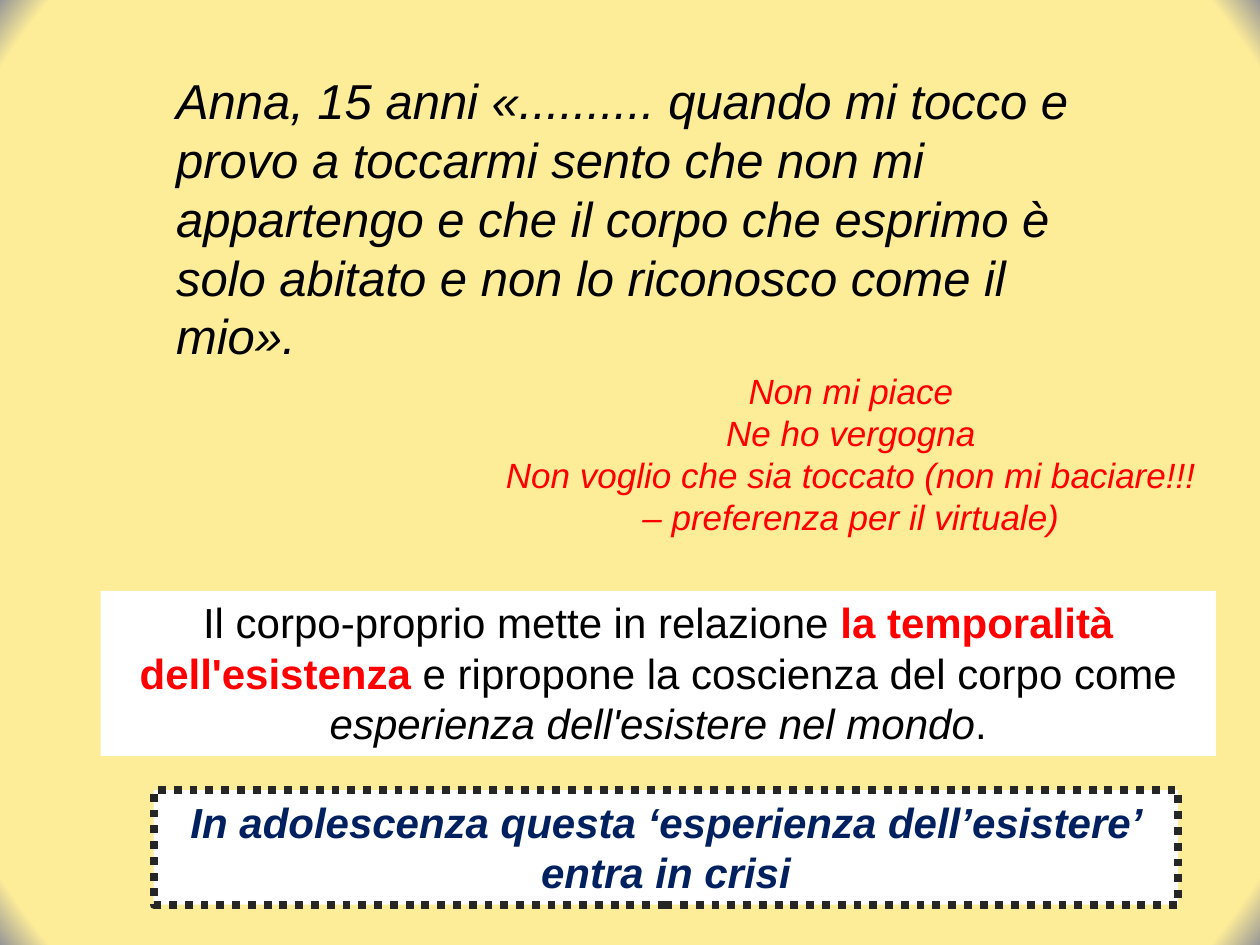
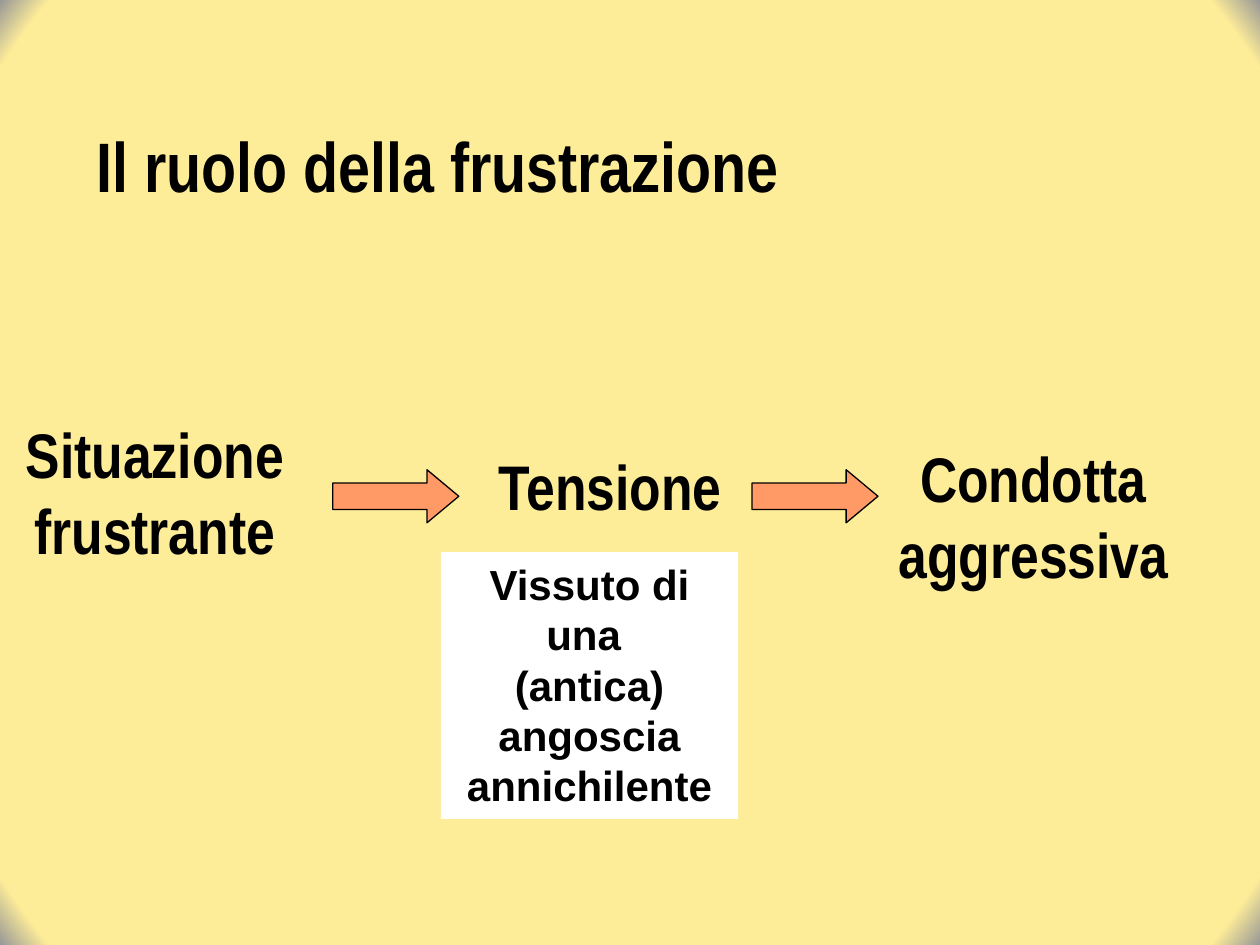
from dataclasses import dataclass

import pptx
import pptx.dml.color
import pptx.enum.dml
import pptx.enum.shapes
import pptx.enum.text
import pptx.oxml
import pptx.oxml.ns
import pptx.util
from pptx.util import Cm

SHAPE = pptx.enum.shapes.MSO_SHAPE
ALIGN = pptx.enum.text.PP_ALIGN


@dataclass(frozen=True)
class Theme:
    # Colours
    paper: str = "FDEC98"
    corner: str = "979797"
    ink: str = "000000"
    red: str = "FF0000"
    navy: str = "002060"
    white: str = "FFFFFF"
    orange: str = "FF9966"
    border: str = "262626"
    # Fonts and type sizes
    body: str = "Arial"
    narrow: str = "Arial Narrow"
    title: int = 40
    step: int = 36
    quote: int = 28
    panel: int = 24
    aside: int = 20


T = Theme()


def rgb(value):
    return pptx.dml.color.RGBColor.from_string(value)


def add_slide(prs):
    """Blank slide with the shared circular background gradient."""
    s = prs.slides.add_slide(prs.slide_layouts[6])
    fill = s.background.fill
    fill.gradient()
    stops = ((0.95, T.paper), (1, T.corner))
    for stop, (position, color) in zip(fill.gradient_stops, stops):
        stop.position = position
        stop.color.rgb = rgb(color)
    ns = pptx.oxml.ns
    lin = s.element.find(".//" + ns.qn("a:lin"))
    circle = pptx.oxml.parse_xml(
        f'<a:path {ns.nsdecls("a")} path="circle">'
        '<a:fillToRect l="50000" t="50000" r="50000" b="50000"/></a:path>')
    lin.getparent().replace(lin, circle)
    return s


def write(sp, text, size, font=T.body, color=T.ink, bold=False, italic=False,
          align=ALIGN.CENTER):
    """Fill sp with paragraphs; a paragraph is a string or a list of
    (text, overrides) runs."""
    tf = sp.text_frame
    tf.word_wrap = True
    tf.vertical_anchor = pptx.enum.text.MSO_ANCHOR.TOP
    paragraphs = [text] if isinstance(text, str) else text
    for i, content in enumerate(paragraphs):
        p = tf.paragraphs[0] if i == 0 else tf.add_paragraph()
        p.alignment = align
        runs = [(content, {})] if isinstance(content, str) else content
        for words, changes in runs:
            r = p.add_run()
            r.text = words
            r.font.name = font
            r.font.size = pptx.util.Pt(size)
            r.font.bold = changes.get("bold", bold)
            r.font.italic = changes.get("italic", italic)
            r.font.color.rgb = rgb(changes.get("color", color))


def add_text(s, box, text, size, **style):
    write(s.shapes.add_textbox(*map(Cm, box)), text, size, **style)


def add_shape(s, kind, box, fill, line=None, width=0.75, dash=None):
    sp = s.shapes.add_shape(kind, *map(Cm, box))
    sp.shadow.inherit = False
    sp.fill.solid()
    sp.fill.fore_color.rgb = rgb(fill)
    if line is None:
        sp.line.fill.background()
    else:
        sp.line.color.rgb = rgb(line)
        sp.line.width = pptx.util.Pt(width)
        if dash is not None:
            sp.line.dash_style = dash
    return sp


def add_panel(s, box, text, line=None, width=0.75, dash=None, **style):
    """White rectangle with text."""
    sp = add_shape(s, SHAPE.RECTANGLE, box, T.white, line, width, dash)
    write(sp, text, T.panel, **style)


def add_arrow(s, left):
    sp = add_shape(s, SHAPE.RIGHT_ARROW, (left, 9.47, 2.54, 1.07),
                   T.orange, T.ink)
    sp.adjustments[0] = 0.5
    sp.adjustments[1] = 0.6


def build_body_slide(prs):
    s = add_slide(prs)
    # Patient's words
    add_text(s, (3.3, 1.3, 19.61, 6.25),
             "Anna, 15 anni «.......... quando mi tocco e provo a toccarmi "
             "sento che non mi appartengo e che il corpo che esprimo è solo "
             "abitato e non lo riconosco come il mio».",
             T.quote, italic=True, align=ALIGN.LEFT)
    # Body and existence
    add_panel(s, (2.03, 11.91, 22.48, 3.33), [[
        ("Il corpo-proprio mette in relazione ", {}),
        ("la temporalità dell'esistenza ", {"bold": True, "color": T.red}),
        ("e ripropone la coscienza del corpo come ", {}),
        ("esperienza dell'esistere nel mondo", {"italic": True}),
        (".", {}),
    ]])
    # Conclusion
    add_panel(s, (3.1, 15.93, 20.65, 2.31),
              "In adolescenza questa ‘esperienza dell’esistere’ entra in crisi",
              line=T.border, width=4.5,
              dash=pptx.enum.dml.MSO_LINE.ROUND_DOT,
              color=T.navy, bold=True, italic=True)
    # Feelings
    add_text(s, (9.7, 7.32, 14.91, 3.68), [
        "Non mi piace",
        "Ne ho vergogna",
        "Non voglio che sia toccato (non mi baciare!!! – preferenza per "
        "il virtuale)",
    ], T.aside, color=T.red, italic=True)


def build_frustration_slide(prs):
    s = add_slide(prs)
    # Title
    add_text(s, (1.7, 2.34, 18.21, 1.96), "Il ruolo della frustrazione",
             T.title, font=T.narrow, bold=True, align=ALIGN.LEFT)
    # Three steps
    steps = (
        ("Situazione frustrante", (-0.89, 8.26, 8.03, 2.54)),
        ("Tensione", (9.7, 8.89, 5.21, 1.47)),
        ("Condotta aggressiva", (17.15, 8.74, 7.37, 2.34)),
    )
    for text, box in steps:
        add_text(s, box, text, T.step, font=T.narrow, bold=True)
    for left in (6.71, 15.16):
        add_arrow(s, left)
    # What lies under the tension
    add_panel(s, (8.89, 11.13, 5.99, 5.38),
              ["Vissuto di una ", "(antica) angoscia annichilente"], bold=True)


def main():
    prs = pptx.Presentation()
    prs.slide_width, prs.slide_height = Cm(25.4), Cm(19.05)
    build_body_slide(prs)
    build_frustration_slide(prs)
    prs.save("out.pptx")


if __name__ == "__main__":
    main()
